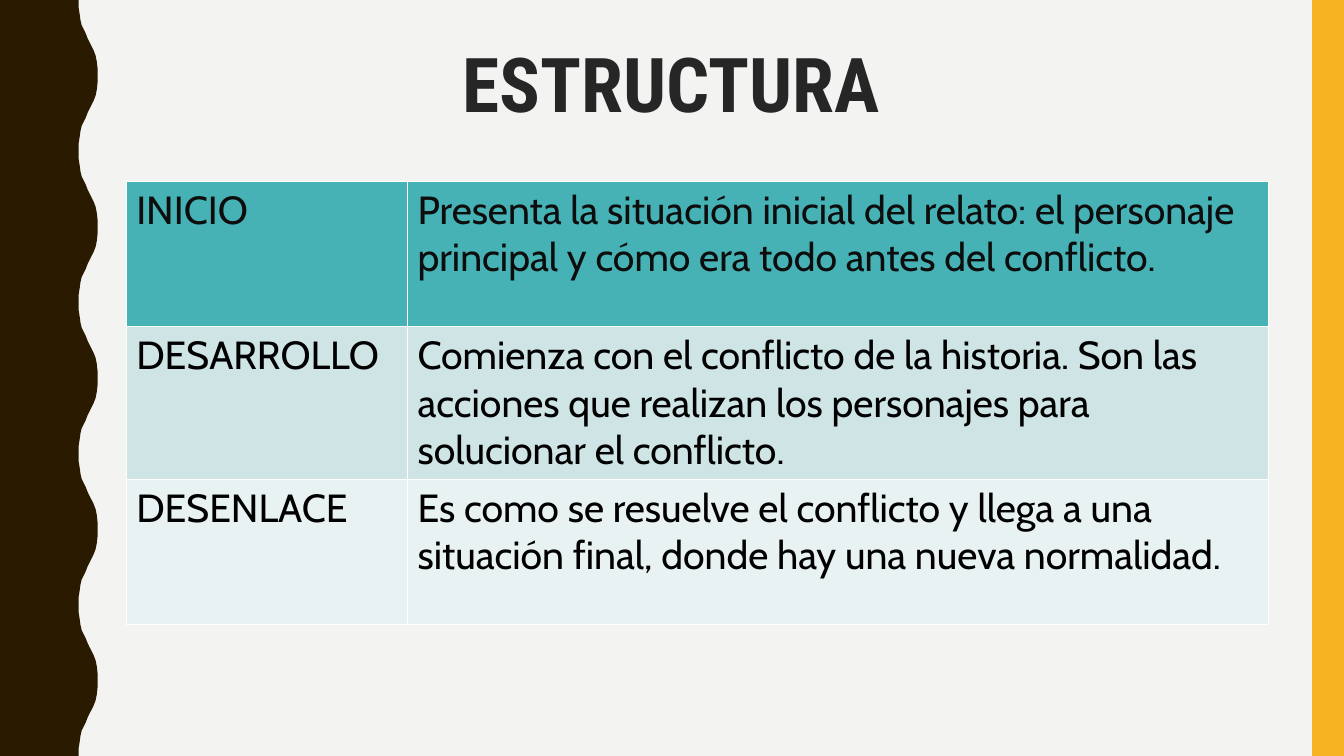
import pptx
import pptx.dml.color
import pptx.enum.shapes
import pptx.enum.text
import pptx.oxml.ns
import pptx.util
from lxml import etree

Cm = pptx.util.Cm
Pt = pptx.util.Pt

# Content
HEADING = "ESTRUCTURA"
STAGES = [
    ("INICIO", "Presenta la situación inicial del relato: el personaje principal "
               "y cómo era todo antes del conflicto."),
    ("DESARROLLO", "Comienza con el conflicto de la historia. Son las acciones que "
                   "realizan los personajes para solucionar el conflicto."),
    ("DESENLACE", "Es como se resuelve el conflicto y llega a una situación final, "
                  "donde hay una nueva normalidad."),
]

THEME = {
    "background": "F3F3F2", "wave": "2A1A00", "stripe": "F8B323",
    "heading": "262626", "border": "FFFFFF",
    "row_fills": ["46B2B5", "CFE4E5", "E9F2F3"],
    "row_inks": ["0D0D0D", "000000", "000000"],
    "heading_font": "Roboto Condensed", "body_font": "Cabin",
    "heading_size": 54, "body_size": 28, "border_width": 1,
}

# Layout in centimetres
SLIDE_W, SLIDE_H = 33.87, 19.05
STRIPE_W = 0.8
COLUMN_WIDTHS = [7.09, 21.69]
ROW_H = 3.66
WAVE_COUNT = 5
WAVE_PERIOD = SLIDE_H / WAVE_COUNT
RISING_EDGE = [
    (1.98, 0), (1.98, 0.18), (2.01, 0.36), (2.03, 0.51), (2.06, 0.64),
    (2.11, 0.74), (2.16, 0.84), (2.21, 0.97), (2.26, 1.07), (2.31, 1.17),
    (2.36, 1.27), (2.41, 1.4), (2.44, 1.55), (2.46, 1.73), (2.46, 1.91),
]


def rgb(code):
    return pptx.dml.color.RGBColor.from_string(code)


def paint(shape, code):
    shape.shadow.inherit = False
    shape.fill.solid()
    shape.fill.fore_color.rgb = rgb(code)
    shape.line.fill.background()


def style_text(paragraph, font_name, size, ink, bold=False):
    for run in paragraph.runs:
        run.font.name = font_name
        run.font.size = Pt(size)
        run.font.bold = bold
        run.font.color.rgb = rgb(ink)


def add_borders(cell):
    qn = pptx.oxml.ns.qn
    properties = cell._tc.get_or_add_tcPr()
    for side in ("a:lnL", "a:lnR", "a:lnT", "a:lnB"):
        border = etree.SubElement(properties, qn(side), w=str(Pt(THEME["border_width"])))
        solid = etree.SubElement(border, qn("a:solidFill"))
        etree.SubElement(solid, qn("a:srgbClr"), val=THEME["border"])


def add_side_bands(slide):
    # Wavy left band: each period is the rising edge and its mirror
    falling_edge = [(x, WAVE_PERIOD - y) for x, y in reversed(RISING_EDGE[:-1])]
    outline = [(x, y + n * WAVE_PERIOD)
               for n in range(WAVE_COUNT) for x, y in RISING_EDGE + falling_edge]
    outline.append((0, SLIDE_H))
    builder = slide.shapes.build_freeform(0, 0)
    builder.add_line_segments([(Cm(x), Cm(y)) for x, y in outline], close=True)
    paint(builder.convert_to_shape(), THEME["wave"])

    # Right stripe
    stripe = slide.shapes.add_shape(
        pptx.enum.shapes.MSO_SHAPE.RECTANGLE,
        Cm(SLIDE_W - STRIPE_W), 0, Cm(STRIPE_W), Cm(SLIDE_H))
    paint(stripe, THEME["stripe"])


def add_stage_table(slide):
    table = slide.shapes.add_table(
        len(STAGES), len(COLUMN_WIDTHS), Cm(3.18), Cm(4.57),
        Cm(sum(COLUMN_WIDTHS)), Cm(ROW_H * len(STAGES))).table
    table.first_row = False
    table.horz_banding = False
    for column, width in zip(table.columns, COLUMN_WIDTHS):
        column.width = Cm(width)
    for row, texts, fill, ink in zip(
            table.rows, STAGES, THEME["row_fills"], THEME["row_inks"]):
        row.height = Cm(ROW_H)
        for cell, text in zip(row.cells, texts):
            cell.text_frame.text = text
            style_text(cell.text_frame.paragraphs[0],
                       THEME["body_font"], THEME["body_size"], ink)
            add_borders(cell)
            cell.fill.solid()
            cell.fill.fore_color.rgb = rgb(fill)


def add_heading(slide):
    frame = slide.shapes.add_textbox(Cm(2.79), Cm(1.07), Cm(28.27), Cm(4.14)).text_frame
    frame.word_wrap = True
    frame.vertical_anchor = pptx.enum.text.MSO_ANCHOR.TOP
    frame.text = HEADING
    paragraph = frame.paragraphs[0]
    paragraph.alignment = pptx.enum.text.PP_ALIGN.CENTER
    paragraph.line_spacing = 0.9
    style_text(paragraph, THEME["heading_font"], THEME["heading_size"],
               THEME["heading"], bold=True)


def main():
    deck = pptx.Presentation()
    deck.slide_width, deck.slide_height = Cm(SLIDE_W), Cm(SLIDE_H)
    slide = deck.slides.add_slide(deck.slide_layouts[6])
    slide.background.fill.solid()
    slide.background.fill.fore_color.rgb = rgb(THEME["background"])
    add_side_bands(slide)
    add_stage_table(slide)
    add_heading(slide)
    deck.save("out.pptx")


if __name__ == "__main__":
    main()
